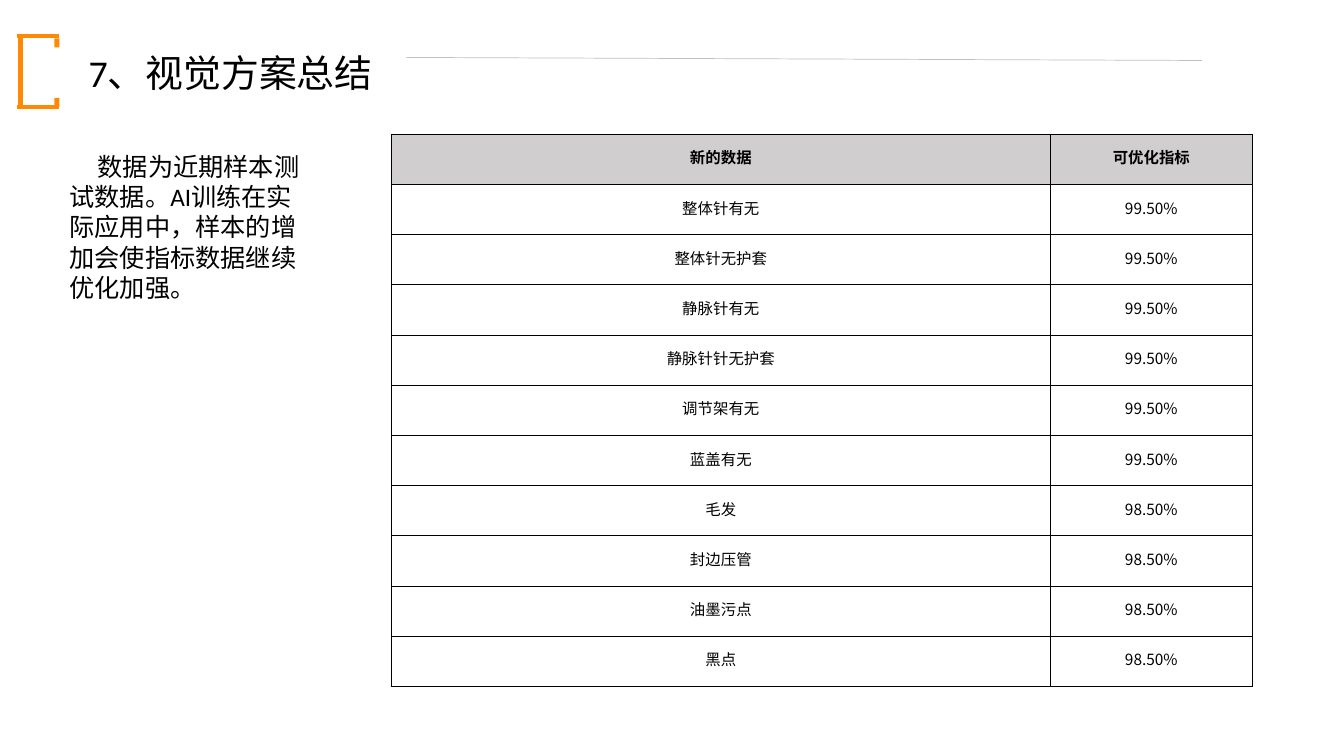
from typing import NamedTuple

from lxml import etree
from pptx import Presentation
from pptx.dml.color import RGBColor
from pptx.enum.shapes import MSO_CONNECTOR, MSO_SHAPE
from pptx.enum.text import MSO_ANCHOR, PP_ALIGN
from pptx.oxml import parse_xml
from pptx.oxml.ns import qn
from pptx.util import Inches, Pt

STRAIGHT = MSO_CONNECTOR.STRAIGHT
RECTANGLE = MSO_SHAPE.RECTANGLE
MIDDLE, TOP = MSO_ANCHOR.MIDDLE, MSO_ANCHOR.TOP
CENTER, LEFT = PP_ALIGN.CENTER, PP_ALIGN.LEFT

BLACK, GRAY, HEADER, ORANGE = "000000", "BFBFBF", "D0CECE", "FF8903"
LATIN, HEAD, CJK = "Calibri", "Arial", "Noto Sans CJK SC"
DRAWING_NS = "http://schemas.openxmlformats.org/drawingml/2006/main"


class Line(NamedTuple):
    x1: float
    y1: float
    x2: float
    y2: float
    color: str
    width: float


class Text(NamedTuple):
    text: str
    left: float
    top: float
    width: float
    height: float
    size: float
    anchor: MSO_ANCHOR
    margins: tuple[float, float, float, float]
    indent: float


class Metric(NamedTuple):
    name: str
    value: str


LINES = [
    Line(4.03, 0.57, 11.92, 0.6, GRAY, 0.5),
    Line(0.17, 1.06, 0.59, 1.06, ORANGE, 2.6),
    Line(0.2, 0.38, 0.2, 1.06, ORANGE, 3.79),
    Line(0.17, 0.36, 0.59, 0.36, ORANGE, 2.6),
]
BRACKET_TIP_TOPS = [0.97, 0.38]
TEXTS = [
    Text("7、视觉方案总结", 0.87, 0.47, 4.6, 0.47, 27, MIDDLE, (0, 0.02, 0, 0), 0.01),
    Text("数据为近期样本测试数据。AI训练在实际应用中，样本的增加会使指标数据继续优化加强。",
         0.59, 1.45, 2.62, 2.38, 18, TOP, (0.1, 0.05, 0.1, 0.05), 0.28),
]
METRICS = [
    Metric("新的数据", "可优化指标"),
    Metric("整体针有无", "99.50%"),
    Metric("整体针无护套", "99.50%"),
    Metric("静脉针有无", "99.50%"),
    Metric("静脉针针无护套", "99.50%"),
    Metric("调节架有无", "99.50%"),
    Metric("蓝盖有无", "99.50%"),
    Metric("毛发", "98.50%"),
    Metric("封边压管", "98.50%"),
    Metric("油墨污点", "98.50%"),
    Metric("黑点", "98.50%"),
]
COLUMN_WIDTHS = [6.54, 2]
TABLE_HEIGHT = 5.48


def rgb(color: str) -> RGBColor:
    return RGBColor.from_string(color)


def add_run(p, text: str, font: str, size: float, bold: bool = False) -> None:
    r = p.add_run()
    r.text = text
    r.font.name, r.font.size, r.font.bold = font, Pt(size), bold
    r.font.color.rgb = rgb(BLACK)
    etree.SubElement(r.font._element, qn("a:ea")).set("typeface", CJK)


def add_line(s, line: Line) -> None:
    c = s.shapes.add_connector(STRAIGHT, Inches(line.x1), Inches(line.y1),
                               Inches(line.x2), Inches(line.y2))
    c.line.color.rgb = rgb(line.color)
    c.line.width = Pt(line.width)
    etree.SubElement(c._element.spPr, qn("a:effectLst"))


def add_bracket_tip(s, top: float) -> None:
    sp = s.shapes.add_shape(RECTANGLE, Inches(0.54), Inches(top), Inches(0.05), Inches(0.09))
    sp.shadow.inherit = False
    sp.fill.solid()
    sp.fill.fore_color.rgb = rgb(ORANGE)
    sp.line.fill.background()


def add_text(s, t: Text) -> None:
    sp = s.shapes.add_textbox(Inches(t.left), Inches(t.top), Inches(t.width), Inches(t.height))
    tf = sp.text_frame
    tf.word_wrap = True
    tf.vertical_anchor = t.anchor
    tf.margin_left, tf.margin_top, tf.margin_right, tf.margin_bottom = map(Inches, t.margins)
    p = tf.paragraphs[0]
    p.alignment = LEFT
    p._p.get_or_add_pPr().set("indent", str(Inches(t.indent)))
    add_run(p, t.text, LATIN, t.size)


def add_borders(cell) -> None:
    for i, side in enumerate(("lnL", "lnR", "lnT", "lnB")):
        border = parse_xml(
            f'<a:{side} xmlns:a="{DRAWING_NS}" w="{Pt(0.5)}"><a:solidFill>'
            f'<a:srgbClr val="{BLACK}"/></a:solidFill></a:{side}>')
        cell._tc.get_or_add_tcPr().insert(i, border)


def fill_cell(cell, text: str, font: str, is_header: bool) -> None:
    cell.vertical_anchor = MIDDLE
    cell.margin_left = cell.margin_top = cell.margin_right = Inches(0.01)
    cell.margin_bottom = Inches(0.05)
    if is_header:
        cell.fill.solid()
        cell.fill.fore_color.rgb = rgb(HEADER)
    else:
        cell.fill.background()
    add_borders(cell)
    p = cell.text_frame.paragraphs[0]
    p.alignment = CENTER
    add_run(p, text, font, 11, is_header)


def add_metrics_table(s, metrics: list[Metric]) -> None:
    table = s.shapes.add_table(len(metrics), len(COLUMN_WIDTHS), Inches(3.88), Inches(1.33),
                               Inches(sum(COLUMN_WIDTHS)), Inches(TABLE_HEIGHT)).table
    table.first_row = table.horz_banding = False
    for column, width in zip(table.columns, COLUMN_WIDTHS):
        column.width = Inches(width)
    for i, metric in enumerate(metrics):
        table.rows[i].height = Inches(TABLE_HEIGHT / len(metrics))
        is_header = i == 0
        fill_cell(table.cell(i, 0), metric.name, HEAD, is_header)
        fill_cell(table.cell(i, 1), metric.value, HEAD if is_header else CJK, is_header)


def main() -> None:
    prs = Presentation()
    prs.slide_width, prs.slide_height = Inches(13.33), Inches(7.5)
    s = prs.slides.add_slide(prs.slide_layouts[6])

    # Title rule and orange bracket
    for line in LINES:
        add_line(s, line)
    for top in BRACKET_TIP_TOPS:
        add_bracket_tip(s, top)

    # Title and side note
    for text in TEXTS:
        add_text(s, text)

    # Metrics table
    add_metrics_table(s, METRICS)

    prs.save("out.pptx")


if __name__ == "__main__":
    main()
